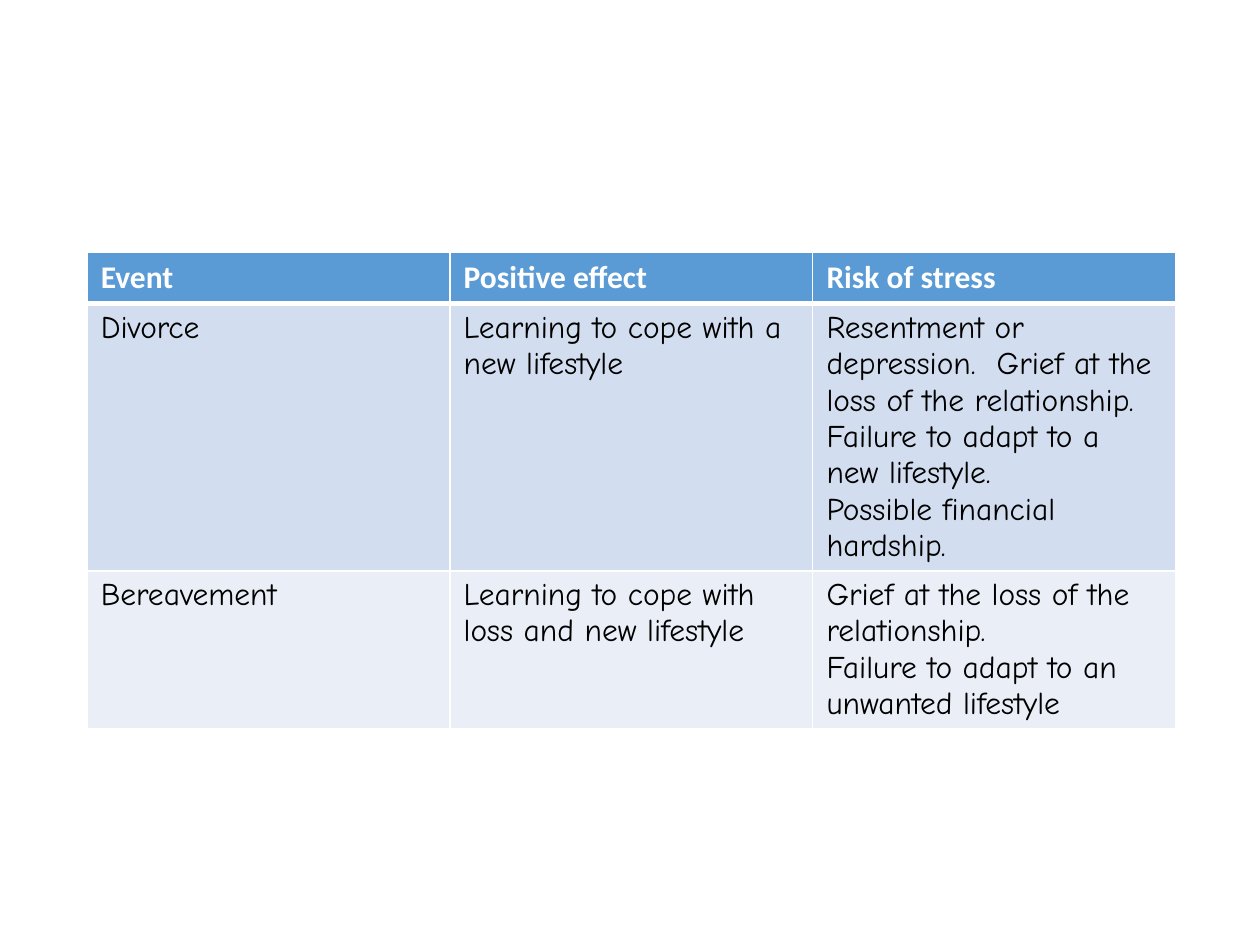
"""Build a slide with a table of life events, their positive effects and stress risks."""
from lxml.etree import SubElement
from pptx import Presentation
from pptx.dml.color import RGBColor
from pptx.oxml.ns import qn
from pptx.util import Inches, Pt

WHITE = RGBColor(0xFF, 0xFF, 0xFF)
BLACK = RGBColor(0x00, 0x00, 0x00)
HEADER_BLUE = RGBColor(0x5B, 0x9B, 0xD5)
BAND_BLUE = RGBColor(0xD2, 0xDE, 0xEF)
BAND_PALE = RGBColor(0xEA, 0xEF, 0xF7)

ROWS = [
    (["Event"], ["Positive effect"], ["Risk of stress"]),
    (
        ["Divorce"],
        ["Learning to cope with a new lifestyle"],
        [
            "Resentment or depression.  Grief at the loss of the relationship.",
            "Failure to adapt to a new lifestyle.",
            "Possible financial hardship.",
        ],
    ),
    (
        ["Bereavement"],
        ["Learning to cope with loss and new lifestyle"],
        [
            "Grief at the loss of the relationship.",
            "Failure to adapt to an unwanted lifestyle",
        ],
    ),
]
ROW_STYLES = [
    (HEADER_BLUE, WHITE, "Calibri", True),
    (BAND_BLUE, BLACK, "Comic Neue", False),
    (BAND_PALE, BLACK, "Comic Neue", False),
]


def add_border(cell, side, width):
    line = SubElement(cell._tc.get_or_add_tcPr(), qn(f"a:ln{side}"), w=str(Pt(width)))
    fill = SubElement(line, qn("a:solidFill"))
    SubElement(fill, qn("a:srgbClr"), val=str(WHITE))


presentation = Presentation()
presentation.slide_width = Inches(10)
presentation.slide_height = Inches(7.5)
slide = presentation.slides.add_slide(presentation.slide_layouts[6])

table = slide.shapes.add_table(
    len(ROWS), 3, Inches(0.69), Inches(2), Inches(8.63), Inches(1.23)
).table
for column in table.columns:
    column.width = Inches(2.88)

for row_index, (row, style) in enumerate(zip(ROWS, ROW_STYLES)):
    fill_color, text_color, font_name, bold = style
    table.rows[row_index].height = Inches(0.41)
    for column_index, lines in enumerate(row):
        cell = table.cell(row_index, column_index)
        cell.margin_left = cell.margin_right = Inches(0.11)
        cell.margin_top = cell.margin_bottom = Inches(0.05)
        for side in "LRTB":
            below_header = (row_index, side) in [(0, "B"), (1, "T")]
            add_border(cell, side, 3 if below_header else 1)
        cell.fill.solid()
        cell.fill.fore_color.rgb = fill_color
        text_frame = cell.text_frame
        for line_index, text in enumerate(lines):
            paragraph = text_frame.add_paragraph() if line_index else text_frame.paragraphs[0]
            run = paragraph.add_run()
            run.text = text
            run.font.name = font_name
            run.font.size = Pt(18)
            run.font.bold = bold
            run.font.color.rgb = text_color

presentation.save("out.pptx")
